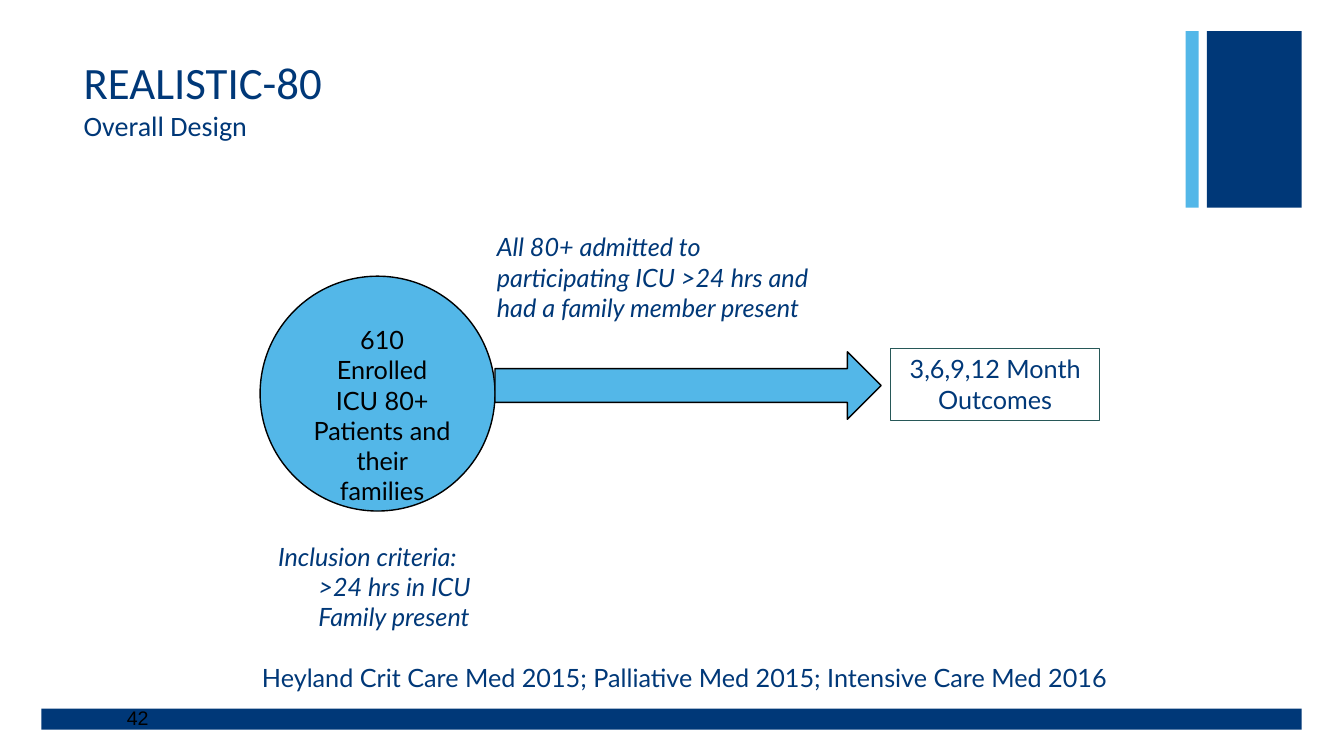
from dataclasses import dataclass

from lxml.etree import SubElement
from pptx import Presentation
from pptx.dml.color import RGBColor
from pptx.enum.shapes import MSO_SHAPE
from pptx.enum.text import MSO_ANCHOR, MSO_AUTO_SIZE, PP_ALIGN
from pptx.oxml.ns import qn
from pptx.shapes.autoshape import Shape
from pptx.slide import Slide
from pptx.text.text import TextFrame
from pptx.util import Inches, Pt


@dataclass(frozen=True)
class Theme:
    navy: RGBColor = RGBColor(0x00, 0x38, 0x78)
    sky: RGBColor = RGBColor(0x53, 0xB7, 0xE8)
    black: RGBColor = RGBColor(0, 0, 0)
    outline: RGBColor = RGBColor(0x27, 0x58, 0x58)
    title_font: str = "Calibri"
    body_font: str = "Lato"
    number_font: str = "Arial"
    title_size: int = 32
    subtitle_size: int = 20
    body_size: int = 18
    number_size: int = 14


THEME = Theme()


@dataclass(frozen=True)
class Area:
    left: float
    top: float
    width: float
    height: float

    def lengths(self) -> tuple[Inches, Inches, Inches, Inches]:
        return (Inches(self.left), Inches(self.top),
                Inches(self.width), Inches(self.height))


@dataclass(frozen=True)
class Figure:
    kind: MSO_SHAPE
    area: Area
    fill: RGBColor | None = None
    line: RGBColor | None = None
    line_width: float = 1


@dataclass(frozen=True)
class Label:
    area: Area
    lines: tuple[str, ...]
    color: RGBColor = THEME.navy
    font: str = THEME.body_font
    size: int = THEME.body_size
    italic: bool = False
    align: PP_ALIGN = PP_ALIGN.LEFT
    anchor: MSO_ANCHOR = MSO_ANCHOR.TOP
    tab: float | None = None


FIGURES = (
    Figure(MSO_SHAPE.RECTANGLE, Area(0.41, 7.03, 12.5, 0.21), THEME.navy),
    Figure(MSO_SHAPE.RECTANGLE, Area(11.97, 0.31, 0.94, 1.75), THEME.navy),
    Figure(MSO_SHAPE.RECTANGLE, Area(11.76, 0.31, 0.13, 1.75), THEME.sky),
    Figure(MSO_SHAPE.OVAL, Area(2.58, 2.74, 2.33, 2.33), THEME.sky, THEME.black),
    Figure(MSO_SHAPE.RIGHT_ARROW, Area(4.91, 3.49, 3.83, 0.67), THEME.sky, THEME.black),
)
OUTCOMES_AREA = Area(8.83, 3.46, 2.08, 0.71)
OUTCOMES_FRAME = Figure(MSO_SHAPE.RECTANGLE, OUTCOMES_AREA,
                        line=THEME.outline, line_width=0.75)
OUTCOMES = Label(OUTCOMES_AREA, ("3,6,9,12 Month Outcomes",), align=PP_ALIGN.CENTER)
LABELS = (
    Label(Area(1.16, 7.03, 9.97, 0.18), ("42",), color=THEME.black,
          font=THEME.number_font, size=THEME.number_size, anchor=MSO_ANCHOR.MIDDLE),
    Label(Area(3, 3.17, 1.58, 1.62),
          ("610 Enrolled", "ICU 80+ Patients and their families"),
          color=THEME.black, align=PP_ALIGN.CENTER),
    Label(Area(4.83, 2.25, 3.5, 1.01),
          ("All 80+ admitted to participating ICU >24 hrs and had a family member present",),
          italic=True),
    Label(Area(2.5, 6.52, 8.67, 0.4),
          ("Heyland Crit Care Med 2015; Palliative Med 2015; Intensive Care Med 2016",)),
    Label(Area(2.66, 5.32, 2.5, 1.01),
          ("Inclusion criteria:", "\t>24 hrs in ICU", "\tFamily present"),
          italic=True, tab=0.4),
)


def add_text(paragraph, text: str, *, font: str, size: int, color: RGBColor,
             italic: bool = False) -> None:
    span = paragraph.add_run()
    span.text = text
    span.font.name = font
    span.font.size = Pt(size)
    span.font.color.rgb = color
    span.font.italic = italic


def fill_frame(frame: TextFrame, label: Label) -> None:
    frame.word_wrap = True
    frame.vertical_anchor = label.anchor
    for index, line in enumerate(label.lines):
        para = frame.add_paragraph() if index else frame.paragraphs[0]
        para.alignment = label.align
        if label.tab is not None:
            tabs = SubElement(para._p.get_or_add_pPr(), qn("a:tabLst"))
            SubElement(tabs, qn("a:tab"), pos=str(Inches(label.tab)), algn="l")
        add_text(para, line, font=label.font, size=label.size,
                 color=label.color, italic=label.italic)


def add_figure(page: Slide, figure: Figure) -> Shape:
    shape = page.shapes.add_shape(figure.kind, *figure.area.lengths())
    shape.shadow.inherit = False
    if figure.fill is None:
        shape.fill.background()
    else:
        shape.fill.solid()
        shape.fill.fore_color.rgb = figure.fill
    if figure.line is None:
        shape.line.fill.background()
    else:
        shape.line.color.rgb = figure.line
        shape.line.width = Pt(figure.line_width)
    return shape


def add_title(page: Slide) -> None:
    title = page.shapes.title
    title.left, title.top, title.width, title.height = Area(0.73, 0.24, 11.02, 1.22).lengths()
    frame = title.text_frame
    frame.auto_size = MSO_AUTO_SIZE.NONE
    frame.vertical_anchor = MSO_ANCHOR.BOTTOM
    para = frame.paragraphs[0]
    para.alignment = PP_ALIGN.LEFT
    add_text(para, "REALISTIC-80", font=THEME.title_font,
             size=THEME.title_size, color=THEME.navy)
    para.add_line_break()
    add_text(para, "Overall Design", font=THEME.title_font,
             size=THEME.subtitle_size, color=THEME.navy)


def main() -> None:
    deck = Presentation()
    deck.slide_width, deck.slide_height = Inches(13.33), Inches(7.5)
    title_only = deck.slide_layouts[5]
    page = deck.slides.add_slide(title_only)
    add_title(page)
    for figure in FIGURES:
        add_figure(page, figure)
    fill_frame(add_figure(page, OUTCOMES_FRAME).text_frame, OUTCOMES)
    for label in LABELS:
        box = page.shapes.add_textbox(*label.area.lengths())
        fill_frame(box.text_frame, label)
    deck.save("out.pptx")


if __name__ == "__main__":
    main()
